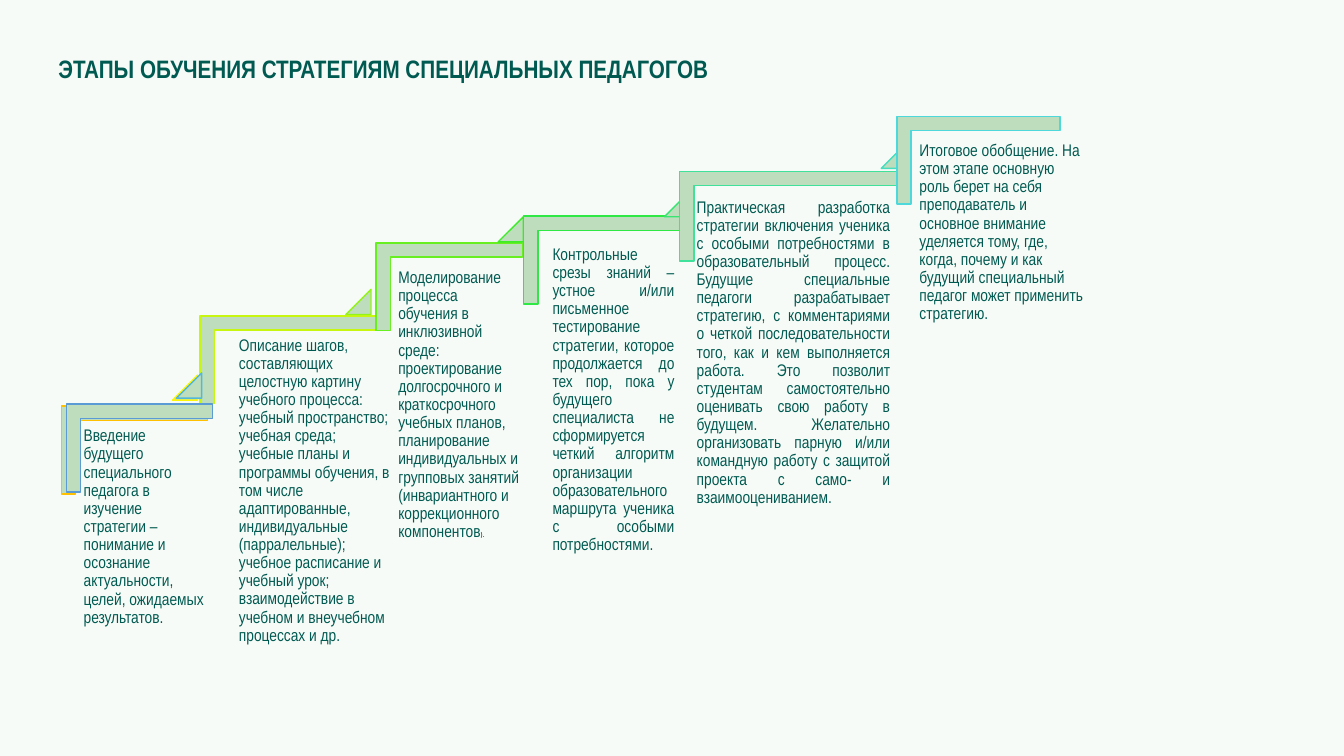
from pptx import Presentation
from pptx import util as u
from pptx.dml.color import RGBColor
from pptx.enum import shapes, text

INK = "005A51"
STEP_FILL = "BDDDBD"
FONT = "Arial Narrow"
LEFT, JUSTIFY = text.PP_ALIGN.LEFT, text.PP_ALIGN.JUSTIFY

STEPS = [
    {"corner": (0.9, 3.74, 0.87, 1.45, "FFC000"), "triangle": (1.71, 3.72, "FBF608"),
     "box": (0.78, 4.19, 1.31, 1.15), "align": LEFT,
     "text": "Введение будущего специального педагога в изучение стратегии – понимание и "
             "осознание актуальности, целей, ожидаемых результатов."},
    {"corner": (2.45, 2.67, 0.87, 1.8, "C7F711"), "triangle": (3.43, 2.87, "94F319"),
     "box": (2.32, 3.29, 1.63, 1.6), "align": LEFT,
     "text": "Описание шагов, составляющих целостную картину учебного процесса: учебный "
             "пространство; учебная среда; учебные планы и программы обучения, в том числе "
             "адаптированные, индивидуальные (парралельные); учебное расписание и учебный "
             "урок; взаимодействие в учебном и внеучебном процессах и др."},
    {"corner": (4.02, 2.12, 0.87, 1.45, "67EF21"), "triangle": (4.94, 2.15, "3EEB28"),
     "box": (3.9, 2.62, 1.31, 1.15), "align": LEFT, "ending": ").",
     "text": "Моделирование процесса обучения в инклюзивной среде: проектирование "
             "долгосрочного и краткосрочного учебных планов, планирование индивидуальных и "
             "групповых занятий (инвариантного и коррекционного компонентов"},
    {"corner": (5.58, 1.76, 0.87, 1.64, "30E845"), "triangle": (6.59, 1.9, "38E472"),
     "box": (5.43, 2.39, 1.31, 1.15), "align": JUSTIFY,
     "text": "Контрольные срезы знаний – устное и/или письменное тестирование стратегии, "
             "которое продолжается до тех пор, пока у будущего специалиста не сформируется "
             "четкий алгоритм организации образовательного маршрута ученика с особыми "
             "потребностями."},
    {"corner": (7.43, 1.01, 0.89, 2.27, "3FE19B"), "triangle": (8.74, 1.42, "46DEBF"),
     "box": (6.86, 1.92, 2.02, 1.15), "align": JUSTIFY,
     "text": "Практическая разработка стратегии включения ученика с особыми потребностями в "
             "образовательный процесс. Будущие специальные педагоги разрабатывает стратегию, "
             "с комментариями о четкой последовательности того, как и кем выполняется работа. "
             "Это позволит студентам самостоятельно оценивать свою работу в будущем. "
             "Желательно организовать парную и/или командную работу с защитой проекта с "
             "само- и взаимооцениванием."},
    {"corner": (9.27, 0.78, 0.87, 1.62, "4DD8DB"),
     "box": (9.07, 1.36, 1.77, 1.15), "align": LEFT,
     "text": "Итоговое обобщение. На этом этапе основную роль берет на себя преподаватель и "
             "основное внимание уделяется тому, где, когда, почему и как будущий специальный "
             "педагог может применить стратегию."},
]


def color(value):
    """Turn a hex string into a colour."""
    return RGBColor.from_string(value)


def add_run(paragraph, words, size, font=FONT, ink=INK, bold=False):
    """Append one formatted run to a paragraph."""
    run = paragraph.add_run()
    run.text = words
    run.font.size = u.Pt(size)
    run.font.name = font
    run.font.bold = bold
    run.font.color.rgb = color(ink)


def set_title(slide, words):
    """Place and format the title placeholder."""
    title = slide.shapes.title
    title.left, title.top = u.Inches(0.48), u.Inches(0.48)
    title.width, title.height = u.Inches(6.84), u.Inches(0.4)
    frame = title.text_frame
    frame.word_wrap = False
    frame.auto_size = text.MSO_AUTO_SIZE.NONE
    frame.vertical_anchor = text.MSO_ANCHOR.MIDDLE
    paragraph = frame.paragraphs[0]
    paragraph.alignment = LEFT
    add_run(paragraph, words, 18, bold=True)


def add_outlined(slide, kind, left, top, width, height, line):
    """Add a green preset shape with a thin coloured outline."""
    shape = slide.shapes.add_shape(
        kind, u.Inches(left), u.Inches(top), u.Inches(width), u.Inches(height))
    shape.shadow.inherit = False
    shape.fill.solid()
    shape.fill.fore_color.rgb = color(STEP_FILL)
    shape.line.color.rgb = color(line)
    shape.line.width = u.Pt(1)
    return shape


def add_corner(slide, left, top, width, height, line):
    """Add the angled tread of one stair."""
    corner = add_outlined(slide, shapes.MSO_SHAPE.CORNER, left, top, width, height, line)
    corner.rotation = 90
    corner.adjustments[0] = corner.adjustments[1] = 0.161


def add_triangle(slide, left, top, line):
    """Add the small right-angled triangle that leads to the next stair."""
    triangle = add_outlined(
        slide, shapes.MSO_SHAPE.ISOSCELES_TRIANGLE, left, top, 0.25, 0.25, line)
    triangle.adjustments[0] = 1


def add_description(slide, box, words, align, ending=None):
    """Add the text under one stair."""
    frame = slide.shapes.add_textbox(*map(u.Inches, box)).text_frame
    frame.word_wrap = True
    frame.margin_left = frame.margin_right = u.Inches(0.05)
    frame.margin_top = frame.margin_bottom = u.Inches(0.05)
    paragraph = frame.paragraphs[0]
    paragraph.alignment = align
    paragraph.line_spacing = 0.9
    add_run(paragraph, words, 12)
    if ending:
        add_run(paragraph, ending, 5, "Calibri", "000000")


def main():
    """Build the staircase slide and save it."""
    presentation = Presentation()
    presentation.slide_width = u.Inches(13.33)
    presentation.slide_height = u.Inches(7.5)
    slide = presentation.slides.add_slide(presentation.slide_layouts[5])
    slide.background.fill.solid()
    slide.background.fill.fore_color.rgb = color("F7FBF7")
    set_title(slide, "ЭТАПЫ ОБУЧЕНИЯ СТРАТЕГИЯМ СПЕЦИАЛЬНЫХ ПЕДАГОГОВ")
    for step in STEPS:
        add_corner(slide, *step["corner"])
        add_description(slide, step["box"], step["text"], step["align"], step.get("ending"))
        if "triangle" in step:
            add_triangle(slide, *step["triangle"])
    add_triangle(slide, 1.75, 3.7, "54B7D8")
    add_corner(slide, 0.95, 3.72, 0.87, 1.45, "5B9BD5")
    presentation.save("out.pptx")


if __name__ == "__main__":
    main()
